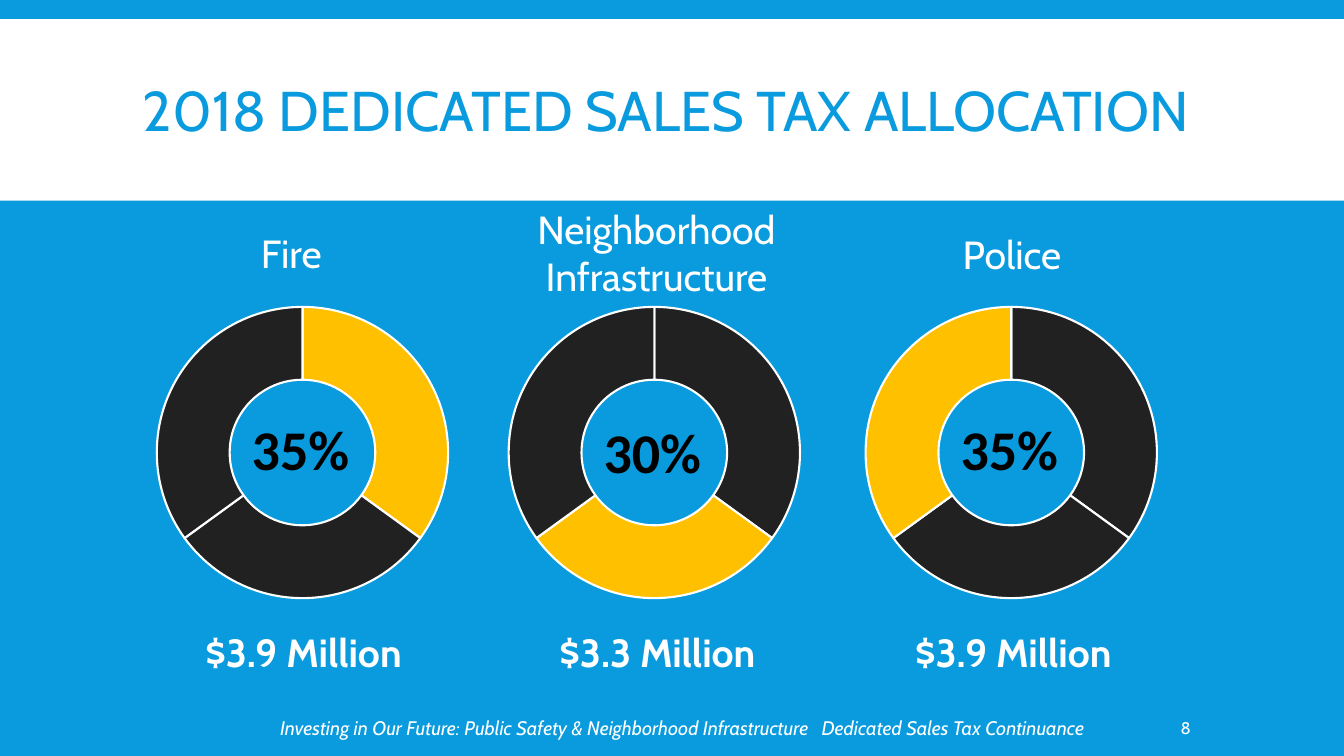
"""Build the 2018 dedicated sales tax allocation slide."""
import dataclasses

import lxml.etree
import pptx
import pptx.chart.data
import pptx.dml.color
import pptx.enum.chart
import pptx.enum.shapes
import pptx.enum.text
import pptx.oxml
import pptx.oxml.ns
import pptx.slide
import pptx.text.text
import pptx.util

RGB = pptx.dml.color.RGBColor
ALIGN = pptx.enum.text.PP_ALIGN
ANCHOR = pptx.enum.text.MSO_ANCHOR

BLUE = RGB(0x09, 0x9B, 0xDD)
WHITE = RGB(0xFF, 0xFF, 0xFF)
BLACK = RGB(0x00, 0x00, 0x00)
GOLD = RGB(0xFF, 0xC0, 0x00)
DARK = RGB(0x21, 0x21, 0x21)

SCALE = 9144
SHARES = (35, 30, 35)
RING_W, RING_H, RING_SIZE = 316, 402, 289
RING_TOP = 248

Box = tuple[int, int, int, int]


@dataclasses.dataclass(frozen=True)
class Label:
    """A text box with one look."""

    text: str
    box: Box
    size: int
    color: RGB = WHITE
    font: str = "Cabin"
    bold: bool = False
    slant: bool = False
    align: ALIGN = ALIGN.LEFT
    anchor: ANCHOR = ANCHOR.TOP


@dataclasses.dataclass(frozen=True)
class Fund:
    """One ring with its name, share and amount."""

    name: str
    amount: str
    left: int
    name_box: Box
    name_align: ALIGN
    share_top: int
    amount_mid: int


FUNDS = (
    Fund("Fire", "$3.9 Million", 142, (249, 223, 119, 57), ALIGN.LEFT, 341, 301),
    Fund("Neighborhood Infrastructure", "$3.3 Million", 491,
         (519, 199, 264, 104), ALIGN.CENTER, 344, 652),
    Fund("Police", "$3.9 Million", 845, (945, 224, 118, 88), ALIGN.LEFT, 341, 1005),
)


def px(count: float) -> pptx.util.Emu:
    """Turn px into EMU."""
    return pptx.util.Emu(int(count * SCALE))


def add_label(slide: pptx.slide.Slide, label: Label) -> pptx.text.text.TextFrame:
    """Draw a label and return its text frame."""
    frame = slide.shapes.add_textbox(*map(px, label.box)).text_frame
    frame.word_wrap = True
    frame.vertical_anchor = label.anchor
    line = frame.paragraphs[0]
    line.text = label.text
    line.alignment = label.align
    font = line.font
    font.name, font.size = label.font, pptx.util.Pt(label.size)
    font.bold, font.italic = label.bold, label.slant
    font.color.rgb = label.color
    return frame


def add_ring(slide: pptx.slide.Slide, left: int, pick: int) -> None:
    """Draw a doughnut chart with one slice picked out."""
    data = pptx.chart.data.CategoryChartData()
    data.categories = ["1", "2", "3"]
    data.add_series("Series 1", SHARES)
    chart = slide.shapes.add_chart(
        pptx.enum.chart.XL_CHART_TYPE.DOUGHNUT,
        *map(px, (left, RING_TOP, RING_W, RING_H)), data).chart
    chart.has_legend = chart.has_title = False
    chart.font.name, chart.font.size = "Cabin", pptx.util.Pt(10)
    chart.font.color.rgb = WHITE
    plot = chart.plots[0]
    plot.vary_by_categories = True
    for index in range(len(SHARES)):
        look = plot.series[0].points[index].format
        look.fill.solid()
        look.fill.fore_color.rgb = GOLD if index == pick else DARK
        look.line.color.rgb = WHITE
        look.line.width = pptx.util.Pt(1.5)
    qn = pptx.oxml.ns.qn
    root = chart.element
    root.find(".//" + qn("c:holeSize")).set("val", "60")
    area = root.find(".//" + qn("c:plotArea"))
    for old in area.findall(qn("c:layout")):
        area.remove(old)
    layout = pptx.oxml.parse_xml(f"<c:layout {pptx.oxml.ns.nsdecls('c')}/>")
    area.insert(0, layout)
    manual = lxml.etree.SubElement(layout, qn("c:manualLayout"))
    wide, high = RING_SIZE / RING_W, RING_SIZE / RING_H
    for tag, value in (
        ("layoutTarget", "inner"), ("xMode", "edge"), ("yMode", "edge"),
        ("x", f"{(1 - wide) / 2:.4f}"), ("y", f"{(1 - high) / 2:.4f}"),
        ("w", f"{wide:.4f}"), ("h", f"{high:.4f}"),
    ):
        lxml.etree.SubElement(manual, qn(f"c:{tag}")).set("val", value)


def add_fund(slide: pptx.slide.Slide, fund: Fund, pick: int) -> None:
    """Draw a ring and its three labels."""
    add_ring(slide, fund.left, pick)
    add_label(slide, Label(
        f"{SHARES[pick]}%", (fund.left + 70, fund.share_top, 172, 208), 40, BLACK,
        "Calibri", bold=True, align=ALIGN.CENTER, anchor=ANCHOR.MIDDLE))
    add_label(slide, Label(fund.name, fund.name_box, 28, align=fund.name_align))
    add_label(slide, Label(fund.amount, (fund.amount_mid - 132, 618, 264, 57), 28,
                           bold=True, align=ALIGN.CENTER))


def add_foot(slide: pptx.slide.Slide) -> None:
    """Draw the footer line and the page number."""
    foot = add_label(slide, Label(
        "Investing in Our Future: Public Safety & Neighborhood Infrastructure\t"
        "Dedicated Sales Tax Continuance", (268, 702, 820, 40), 14,
        slant=True, anchor=ANCHOR.MIDDLE))
    tabs = pptx.oxml.parse_xml(
        f'<a:tabLst {pptx.oxml.ns.nsdecls("a")}>'
        f'<a:tab pos="{px(537)}" algn="l"/></a:tabLst>')
    foot.paragraphs[0].font
    foot.paragraphs[0]._p.pPr.insert(0, tabs)
    page = add_label(slide, Label("8", (1166, 702, 103, 40), 12, anchor=ANCHOR.MIDDLE))
    page.margin_left = px(5)


def main() -> None:
    """Build and save the deck."""
    deck = pptx.Presentation()
    deck.slide_width, deck.slide_height = px(1333), px(750)
    slide = deck.slides.add_slide(deck.slide_layouts[6])
    slide.background.fill.solid()
    slide.background.fill.fore_color.rgb = BLUE
    band = slide.shapes.add_shape(
        pptx.enum.shapes.MSO_SHAPE.RECTANGLE, *map(px, (0, 19, 1333, 180)))
    band.shadow.inherit = False
    band.fill.solid()
    band.fill.fore_color.rgb = WHITE
    band.line.fill.background()
    title = add_label(slide, Label(
        "2018 DEDICATED SALES TAX ALLOCATION", (132, 31, 1070, 165), 40, BLUE,
        anchor=ANCHOR.MIDDLE))
    title.paragraphs[0].line_spacing = 0.85
    for pick, fund in enumerate(FUNDS):
        add_fund(slide, fund, pick)
    add_foot(slide)
    deck.save("out.pptx")


if __name__ == "__main__":
    main()
